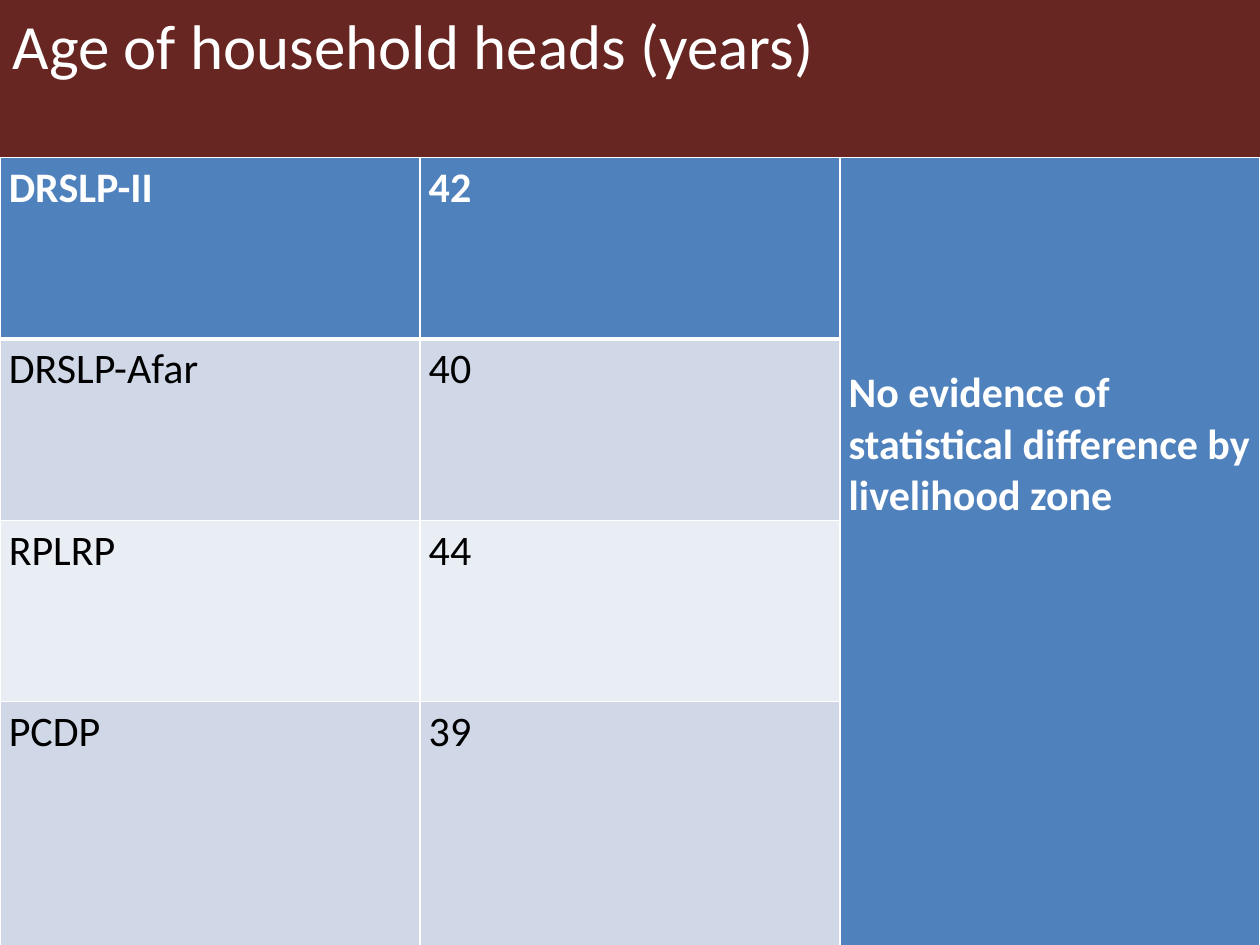
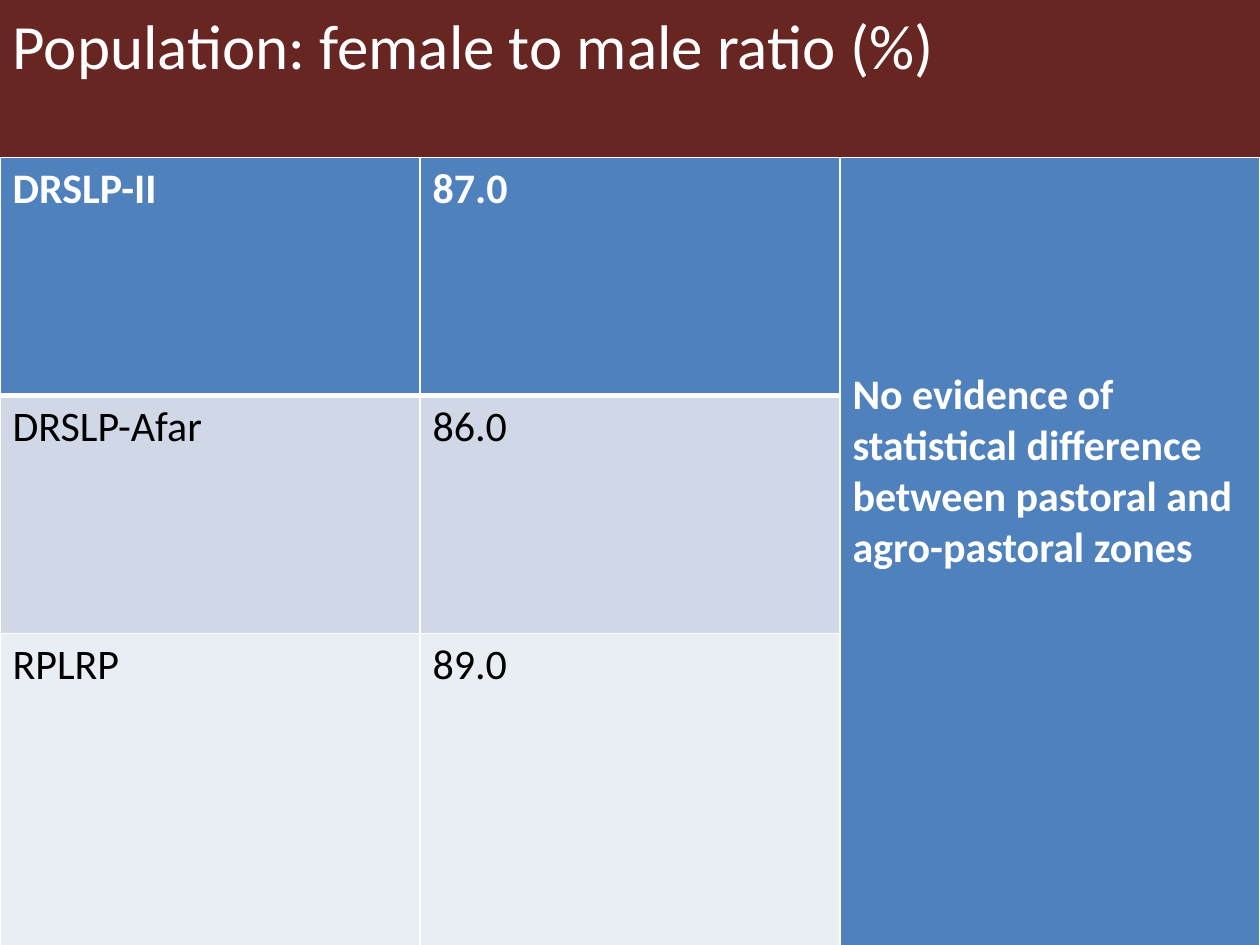
from dataclasses import dataclass

from lxml import etree
from pptx import Presentation
from pptx import util as u
from pptx.dml.color import RGBColor
from pptx.enum import text
from pptx.oxml import ns


@dataclass(frozen=True)
class Theme:
    font: str = "Calibri"
    title_size: int = 36
    cell_size: int = 24
    band: str = "682622"
    header: str = "4F81BD"
    stripes: tuple = ("D0D8E8", "E9EDF4")
    light: str = "FFFFFF"
    dark: str = "000000"
    thin: int = 1
    thick: int = 3


@dataclass(frozen=True)
class Box:
    x: float
    y: float
    w: float
    h: float

    def lengths(self):
        return [u.Inches(n) for n in (self.x, self.y, self.w, self.h)]


T = Theme()
TITLE_BOX = Box(0, 0, 10, 1.25)
TABLE_BOX = Box(0, 1.25, 10, 6.25)
NOTE_DROP = 1.63


def style_text(tf, size, color, bold=False):
    for p in tf.paragraphs:
        p.alignment = text.PP_ALIGN.LEFT
        for r in p.runs:
            r.font.name = T.font
            r.font.size = u.Pt(size)
            r.font.bold = bold
            r.font.color.rgb = RGBColor.from_string(color)


def add_title(s, box, title):
    sp = s.shapes.title
    sp.left, sp.top, sp.width, sp.height = box.lengths()
    sp.fill.solid()
    sp.fill.fore_color.rgb = RGBColor.from_string(T.band)
    tf = sp.text_frame
    tf.text = title
    tf.word_wrap = True
    tf.auto_size = text.MSO_AUTO_SIZE.NONE
    tf.vertical_anchor = text.MSO_ANCHOR.TOP
    style_text(tf, T.title_size, T.light)


def set_borders(cell, top, bottom):
    tc_pr = cell._tc.get_or_add_tcPr()
    for side, width in zip("LRTB", (T.thin, T.thin, top, bottom)):
        ln = etree.SubElement(tc_pr, ns.qn(f"a:ln{side}"), w=str(u.Pt(width)))
        fill = etree.SubElement(ln, ns.qn("a:solidFill"))
        etree.SubElement(fill, ns.qn("a:srgbClr"), val=T.light)


def style_cell(cell, row, is_header, inset):
    set_borders(cell, T.thick if row == 1 else T.thin,
                T.thick if row == 0 else T.thin)
    cell.fill.solid()
    color = T.header if is_header else T.stripes[(row - 1) % 2]
    cell.fill.fore_color.rgb = RGBColor.from_string(color)
    cell.margin_left = cell.margin_right = u.Inches(inset[0])
    cell.margin_top = cell.margin_bottom = u.Inches(inset[1])
    style_text(cell.text_frame, T.cell_size, T.light if is_header else T.dark,
               is_header)


def add_comparison(s, box, rows, note, row_height, inset):
    count = len(rows)
    table = s.shapes.add_table(count, 3, *box.lengths()).table
    for row in table.rows:
        row.height = u.Inches(row_height)
    table.rows[count - 1].height = u.Inches(box.h - row_height * (count - 1))

    for i, values in enumerate(rows):
        for j, value in enumerate(values):
            table.cell(i, j).text_frame.text = value
    note_cell = table.cell(0, 2)
    note_cell.text_frame.text = note
    note_cell.merge(table.cell(count - 1, 2))

    for i in range(count):
        for j in range(3):
            style_cell(table.cell(i, j), i, i == 0 or j == 2, inset)
    note_cell.margin_top = u.Inches(inset[1] + NOTE_DROP)


def add_comparison_slide(prs, title, **content):
    s = prs.slides.add_slide(prs.slide_layouts.get_by_name("Title Only"))
    add_title(s, TITLE_BOX, title)
    add_comparison(s, TABLE_BOX, **content)


def main():
    prs = Presentation()
    prs.slide_width, prs.slide_height = u.Inches(10), u.Inches(7.5)
    add_comparison_slide(
        prs, "Age of household heads (years)",
        rows=[("DRSLP-II", "42"), ("DRSLP-Afar", "40"),
              ("RPLRP", "44"), ("PCDP", "39")],
        note="No evidence of statistical difference by livelihood zone",
        row_height=1.44, inset=(0.07, 0.04))
    add_comparison_slide(
        prs, "Population: female to male ratio (%)",
        rows=[("DRSLP-II", "87.0"), ("DRSLP-Afar", "86.0"),
              ("RPLRP", "89.0")],
        note="No evidence of statistical difference between pastoral and "
             "agro-pastoral zones",
        row_height=1.89, inset=(0.1, 0.05))
    prs.save("out.pptx")


if __name__ == "__main__":
    main()
